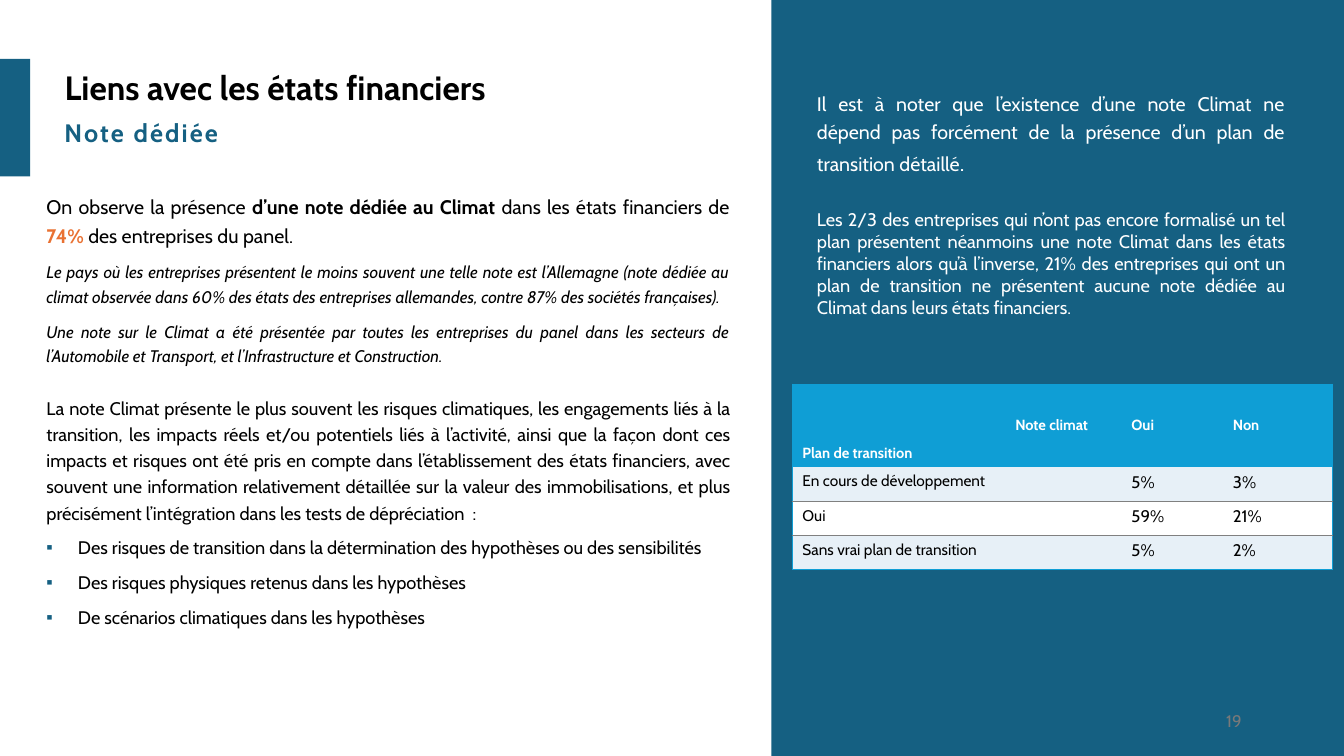
from lxml import etree
from pptx import Presentation
from pptx.dml.color import RGBColor
from pptx.enum.shapes import MSO_SHAPE
from pptx.enum.text import MSO_ANCHOR, MSO_AUTO_SIZE, PP_ALIGN
from pptx.oxml.ns import qn
from pptx.util import Pt

RECTANGLE = MSO_SHAPE.RECTANGLE
TOP, MIDDLE, BOTTOM = MSO_ANCHOR.TOP, MSO_ANCHOR.MIDDLE, MSO_ANCHOR.BOTTOM
LEFT, RIGHT, JUSTIFY = PP_ALIGN.LEFT, PP_ALIGN.RIGHT, PP_ALIGN.JUSTIFY
NO_AUTOFIT = MSO_AUTO_SIZE.NONE

FONT = "Cabin"
BLUE, SKY, PALE = "156082", "0F9ED5", "E7F0F7"
ORANGE, GREY, NUMBER_GREY = "E97132", "808080", "797979"
BLACK, WHITE = "000000", "FFFFFF"

INTRODUCTION = [
    ("On observe la présence ", {}),
    ("d’une note dédiée au Climat ", {"bold": True}),
    ("dans les états financiers de ", {}),
    ("74% ", {"bold": True, "color": ORANGE}),
    ("des entreprises du panel.", {}),
]
COUNTRIES = (
    "Le pays où les entreprises présentent le moins souvent une telle note est l’Allemagne "
    "(note dédiée au climat observée dans 60% des états des entreprises allemandes, "
    "contre 87% des sociétés françaises)."
)
SECTORS = (
    "Une note sur le Climat a été présentée par toutes les entreprises du panel dans les "
    "secteurs de l’Automobile et Transport, et l’Infrastructure et Construction."
)
CONTENT = (
    "La note Climat présente le plus souvent les risques climatiques, les engagements liés "
    "à la transition, les impacts réels et/ou potentiels liés à l’activité, ainsi que la "
    "façon dont ces impacts et risques ont été pris en compte dans l’établissement des états "
    "financiers, avec souvent une information relativement détaillée sur la valeur des "
    "immobilisations, et plus précisément l’intégration dans les tests de dépréciation  :"
)
BULLETS = [
    "Des risques de transition dans la détermination des hypothèses ou des sensibilités",
    "Des risques physiques retenus dans les hypothèses",
    "De scénarios climatiques dans les hypothèses",
]
REMARK = (
    "Il est à noter que l’existence d’une note Climat ne dépend pas forcément de la "
    "présence d’un plan de transition détaillé"
)
FIGURES = (
    "Les 2/3 des entreprises qui n’ont pas encore formalisé un tel plan présentent néanmoins "
    "une note Climat dans les états financiers alors qu’à l’inverse, 21% des entreprises qui "
    "ont un plan de transition ne présentent aucune note dédiée au Climat dans leurs états "
    "financiers."
)
TABLE_ROWS = [
    ["Plan de transition", "Note climat", "Oui", "Non"],
    ["En cours de développement", "", "5%", "3%"],
    ["Oui", "", "59%", "21%"],
    ["Sans vrai plan de transition", "", "5%", "2%"],
]
COLUMN_WIDTHS = [152, 83, 72.5, 78.5]
ROW_HEIGHTS = [59, 24.5, 24.5, 24.5]


def rgb(color):
    return RGBColor.from_string(color)


def add_rectangle(slide, left, top, width, height, color):
    shape = slide.shapes.add_shape(RECTANGLE, Pt(left), Pt(top), Pt(width), Pt(height))
    shape.shadow.inherit = False
    shape.fill.solid()
    shape.fill.fore_color.rgb = rgb(color)
    shape.line.fill.background()


def prepare_frame(shape, left, top, width, height, anchor=TOP):
    shape.left, shape.top, shape.width, shape.height = Pt(left), Pt(top), Pt(width), Pt(height)
    text_frame = shape.text_frame
    text_frame.word_wrap = True
    text_frame.auto_size = NO_AUTOFIT
    text_frame.vertical_anchor = anchor
    return text_frame


def add_text_box(slide, left, top, width, height, anchor=TOP):
    shape = slide.shapes.add_textbox(Pt(left), Pt(top), Pt(width), Pt(height))
    return prepare_frame(shape, left, top, width, height, anchor)


def add_run(paragraph, text, size, color=BLACK, bold=False, italic=False):
    run = paragraph.add_run()
    run.text = text
    run.font.name = FONT
    run.font.size = Pt(size)
    run.font.bold = bold
    run.font.italic = italic
    run.font.color.rgb = rgb(color)
    return run


def format_paragraph(paragraph, alignment=LEFT, line_spacing=1.0, space_after=0):
    paragraph.alignment = alignment
    paragraph.line_spacing = line_spacing
    paragraph.space_before = Pt(0)
    paragraph.space_after = Pt(space_after)


def set_bullet(paragraph, character=None):
    """Give the paragraph a hanging bullet, or none at all."""
    properties = paragraph._p.get_or_add_pPr()
    indent = Pt(22.5) if character else 0
    properties.set("marL", str(indent))
    properties.set("indent", str(-indent))
    if character:
        bullet_color = etree.SubElement(properties, qn("a:buClr"))
        etree.SubElement(bullet_color, qn("a:srgbClr"), val=BLUE)
        etree.SubElement(properties, qn("a:buChar"), char=character)
    else:
        etree.SubElement(properties, qn("a:buNone"))


def fill_body(text_frame):
    # Runs, size, italic, space after, bullet
    entries = [
        (INTRODUCTION, 14, False, 8, None),
        ([(COUNTRIES, {})], 12, True, 8, None),
        ([(SECTORS, {})], 12, True, 19, None),
        ([(CONTENT, {})], 13, False, 6, None),
    ]
    entries += [([(text, {})], 13, False, 6, "▪") for text in BULLETS]
    for index, (runs, size, italic, space_after, bullet) in enumerate(entries):
        paragraph = text_frame.add_paragraph() if index else text_frame.paragraphs[0]
        format_paragraph(paragraph, JUSTIFY, 1.2, space_after)
        set_bullet(paragraph, bullet)
        for text, style in runs:
            add_run(paragraph, text, size, italic=italic, **style)


def set_border(cell, side, color):
    line = etree.SubElement(cell._tc.get_or_add_tcPr(), qn("a:" + side), w=str(Pt(1 if color == SKY else 0.5)))
    if color:
        fill = etree.SubElement(line, qn("a:solidFill"))
        etree.SubElement(fill, qn("a:srgbClr"), val=color)
    else:
        etree.SubElement(line, qn("a:noFill"))


def format_cell(cell, text, row, column):
    last_row, last_column = len(TABLE_ROWS) - 1, len(COLUMN_WIDTHS) - 1
    header = row == 0
    # Borders come before the fill in the cell properties
    set_border(cell, "lnL", SKY if column == 0 else None)
    set_border(cell, "lnR", SKY if column == last_column else None)
    set_border(cell, "lnT", SKY if row <= 1 else GREY)
    set_border(cell, "lnB", SKY if row in (0, last_row) else GREY)
    cell.fill.solid()
    cell.fill.fore_color.rgb = rgb(SKY if header else PALE if row % 2 else WHITE)
    cell.vertical_anchor = TOP if not header else BOTTOM if column == 0 else MIDDLE
    paragraph = cell.text_frame.paragraphs[0]
    size = 10.5 if header else 11 if column == 0 else 12
    if text:
        add_run(paragraph, text, size, WHITE if header else BLACK, bold=header)
    else:
        # An empty cell keeps the row low
        etree.SubElement(paragraph._p, qn("a:endParaRPr"), sz=str(size * 100))


def add_plan_table(slide, left, top):
    frame = slide.shapes.add_table(
        len(TABLE_ROWS), len(COLUMN_WIDTHS), Pt(left), Pt(top),
        Pt(sum(COLUMN_WIDTHS)), Pt(sum(ROW_HEIGHTS)),
    )
    table = frame.table
    for column, width in zip(table.columns, COLUMN_WIDTHS):
        column.width = Pt(width)
    for row, height in zip(table.rows, ROW_HEIGHTS):
        row.height = Pt(height)
    for row, texts in enumerate(TABLE_ROWS):
        for column, text in enumerate(texts):
            format_cell(table.cell(row, column), text, row, column)


def main():
    presentation = Presentation()
    presentation.slide_width, presentation.slide_height = Pt(960), Pt(540)
    slide = presentation.slides.add_slide(presentation.slide_layouts[1])

    # Accent bar and side panel
    add_rectangle(slide, 0, 42, 21.5, 84, BLUE)
    add_rectangle(slide, 551, 0, 409, 540, BLUE)

    # Title and subtitle
    title = prepare_frame(slide.shapes.title, 39, 44.5, 433, 36).paragraphs[0]
    format_paragraph(title)
    add_run(title, "Liens avec les états financiers", 24, bold=True)
    subtitle = add_text_box(slide, 39, 80.5, 490, 29).paragraphs[0]
    run = add_run(subtitle, "Note dédiée", 18, BLUE, bold=True)
    run.font._element.set("spc", "150")

    # Main text
    fill_body(prepare_frame(slide.placeholders[1], 26, 132.5, 502.5, 355))

    # Side panel text
    side_text = add_text_box(slide, 576.5, 58.5, 348.5, 201)
    remark = side_text.paragraphs[0]
    format_paragraph(remark, JUSTIFY, 1.2, 23.5)
    add_run(remark, REMARK, 14, WHITE)
    add_run(remark, ".", 16, WHITE)
    figures = side_text.add_paragraph()
    format_paragraph(figures, JUSTIFY)
    add_run(figures, FIGURES, 13, WHITE)

    # Table and page number
    add_plan_table(slide, 566, 274.5)
    page_number = add_text_box(slide, 678, 500.5, 216, 29, MIDDLE).paragraphs[0]
    format_paragraph(page_number, RIGHT)
    add_run(page_number, "19", 12, NUMBER_GREY)

    presentation.save("out.pptx")


if __name__ == "__main__":
    main()
